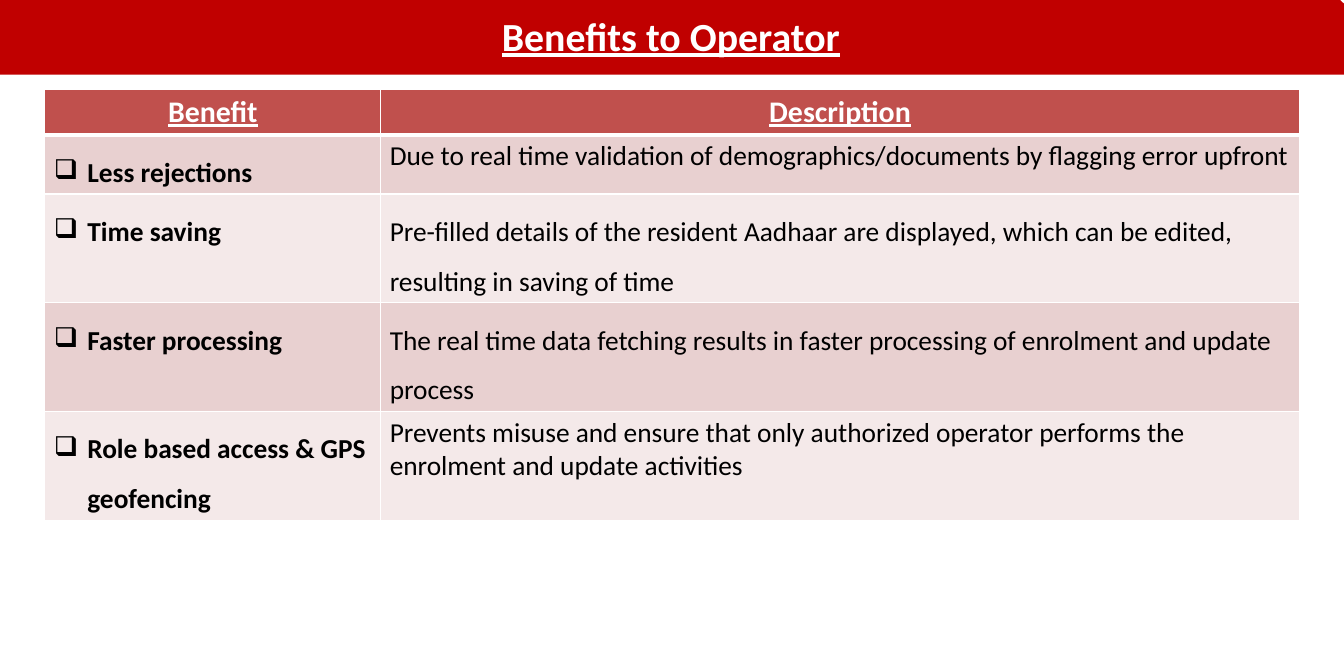
from lxml.etree import SubElement
from pptx import Presentation
from pptx.dml.color import RGBColor
from pptx.enum.shapes import MSO_SHAPE
from pptx.enum.text import MSO_ANCHOR, PP_ALIGN
from pptx.oxml.ns import qn
from pptx.util import Pt

WHITE, BLACK, RED, HEADER = "FFFFFF", "000000", "C00000", "C0504D"
BANDS = ["E8D0D0", "F4E9E9"]
TITLE = {"size": Pt(32), "bold": True, "underline": True}
HEADING = {"size": Pt(24), "bold": True, "underline": True}
LABEL = {"size": Pt(22), "bold": True, "underline": False}
BODY = {"size": Pt(22), "bold": False, "underline": False}

BENEFITS = [
    ("Less rejections", "Due to real time validation of demographics/documents by flagging error upfront", 1),
    ("Time saving", "Pre-filled details of the resident Aadhaar are displayed, which can be edited, "
     "resulting in saving of time", 1.5),
    ("Faster processing", "The real time data fetching results in faster processing of enrolment "
     "and update process", 1.5),
    ("Role based access & GPS geofencing", "Prevents misuse and ensure that only authorized operator "
     "performs the enrolment and update activities", 1),
]
ROW_HEIGHTS = [30, 38, 55.5, 73.5, 73.5]


def rgb(value):
    return RGBColor.from_string(value)


def paint(obj, color):
    obj.fill.solid()
    obj.fill.fore_color.rgb = rgb(color)


def write(tf, text, color, formats, align=PP_ALIGN.LEFT, spacing=1.0):
    p = tf.paragraphs[0]
    p.alignment = align
    p.line_spacing = spacing
    r = p.add_run()
    r.text = text
    r.font.name = "Calibri"
    r.font.color.rgb = rgb(color)
    for name, value in formats.items():
        setattr(r.font, name, value)
    return p


def add_bullet(p, indent):
    pPr = p._p.get_or_add_pPr()
    pPr.set("marL", str(indent))
    pPr.set("indent", str(-indent))
    SubElement(pPr, qn("a:buChar"), char="❑")


def add_borders(cell, top, bottom):
    tcPr = cell._tc.get_or_add_tcPr()
    for side, width in {"L": 1, "R": 1, "T": top, "B": bottom}.items():
        ln = SubElement(tcPr, qn(f"a:ln{side}"), w=str(Pt(width)))
        SubElement(SubElement(ln, qn("a:solidFill")), qn("a:srgbClr"), val=WHITE)


def add_title(s, x, y, w, h):
    sp = s.shapes.add_shape(MSO_SHAPE.SNIP_1_RECTANGLE, Pt(x), Pt(y), Pt(w), Pt(h))
    sp.adjustments[0] = 0.05
    sp.shadow.inherit = False
    paint(sp, RED)
    sp.line.fill.background()
    tf = sp.text_frame
    tf.word_wrap = True
    tf.vertical_anchor = MSO_ANCHOR.MIDDLE
    write(tf, "Benefits to Operator", WHITE, TITLE, PP_ALIGN.CENTER, 0.9)


def add_benefits(s, x, y, w, h):
    table = s.shapes.add_table(len(BENEFITS) + 1, 2, Pt(x), Pt(y), Pt(w), Pt(h)).table
    for column, width in zip(table.columns, (270, w - 270)):
        column.width = Pt(width)
    for row, height in zip(table.rows, ROW_HEIGHTS):
        row.height = Pt(height)
    for i, row in enumerate(table.rows):
        for cell in row.cells:
            add_borders(cell, 3 if i == 1 else 1, 3 if i == 0 else 1)
            paint(cell, BANDS[(i - 1) % 2] if i else HEADER)
    for cell, text in zip(table.rows[0].cells, ("Benefit", "Description")):
        write(cell.text_frame, text, WHITE, HEADING, PP_ALIGN.CENTER)
    for i, (benefit, description, spacing) in enumerate(BENEFITS, 1):
        p = write(table.cell(i, 0).text_frame, benefit, BLACK, LABEL, spacing=1.5)
        add_bullet(p, Pt(27))
        write(table.cell(i, 1).text_frame, description, BLACK, BODY, spacing=spacing)


def main():
    prs = Presentation()
    prs.slide_width, prs.slide_height = Pt(1080), Pt(540)
    s = prs.slides.add_slide(prs.slide_layouts[6])
    add_title(s, 0, 0, 1080, 60)
    add_benefits(s, 36, 72, 1008, 342)
    prs.save("out.pptx")


if __name__ == "__main__":
    main()
